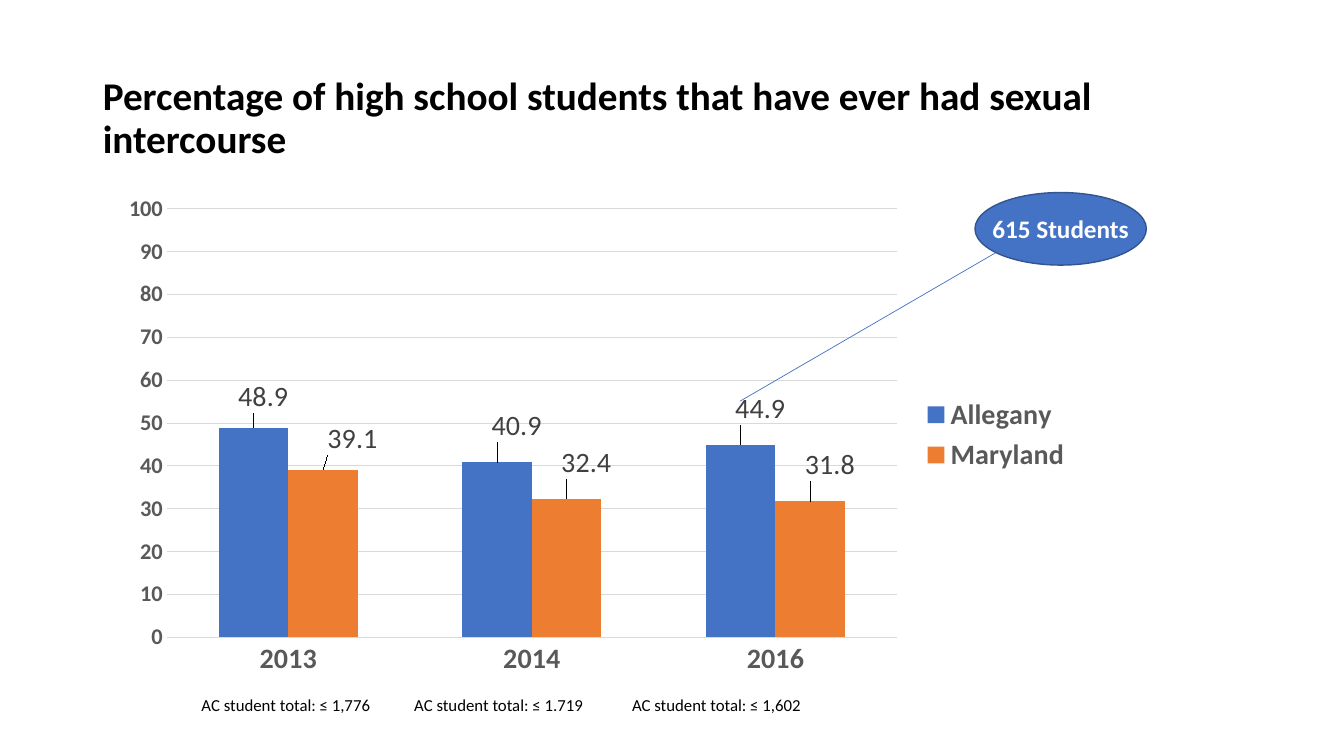
from dataclasses import dataclass

from lxml import etree
from pptx import Presentation
from pptx.chart.data import CategoryChartData
from pptx.dml.color import RGBColor as RGB
from pptx.enum.chart import XL_CHART_TYPE as CT, XL_LABEL_POSITION as LP
from pptx.enum.chart import XL_LEGEND_POSITION as LegendPos, XL_TICK_MARK as Tick
from pptx.enum.shapes import MSO_CONNECTOR as Conn, MSO_SHAPE as Shape
from pptx.enum.text import MSO_ANCHOR as Anchor, MSO_AUTO_SIZE as AutoSize, PP_ALIGN as Align
from pptx.oxml.ns import qn
from pptx.util import Pt


@dataclass(frozen=True)
class Theme:
    font: str = "Calibri"
    black: str = "000000"
    white: str = "FFFFFF"
    axis: str = "595959"
    label: str = "404040"
    grid: str = "D9D9D9"
    blue: str = "4472C4"
    blue_edge: str = "325491"
    orange: str = "ED7D31"
    title: int = 28
    large: int = 20
    callout: int = 18
    scale: int = 16
    note: int = 12


T = Theme()
PX = 9144  # 100 px to the inch

YEARS = ["2013", "2014", "2016"]
# name, colour, values, label shifts as fractions of the chart
SERIES = [
    ("Allegany", T.blue, (48.9, 40.9, 44.9), ((0.01, -0.02), (0.02, -0.03), (0.02, -0.03))),
    ("Maryland", T.orange, (39.1, 32.4, 31.8), ((0.03, -0.02), (0.02, -0.03), (0.02, -0.03))),
]
TOTALS = [(190, "1,776"), (401, "1.719"), (617, "1,602")]


def px(*lengths):
    return [n * PX for n in lengths]


def set_font(font, size, color, bold=False):
    for key, value in {"name": T.font, "size": Pt(size), "bold": bold}.items():
        setattr(font, key, value)
    font.color.rgb = RGB.from_string(color)


def set_line(line, color, width):
    line.color.rgb = RGB.from_string(color)
    line.width = Pt(width)


def add_title(slide, text, box):
    sp = slide.shapes.title
    for key, value in zip(("left", "top", "width", "height"), px(*box)):
        setattr(sp, key, value)
    tf = sp.text_frame
    for key, value in {"text": text, "vertical_anchor": Anchor.MIDDLE,
                       "auto_size": AutoSize.NONE, "word_wrap": True}.items():
        setattr(tf, key, value)
    p = tf.paragraphs[0]
    p.alignment, p.line_spacing = Align.LEFT, 0.9
    set_font(p.runs[0].font, T.title, T.black, True)


def add_text(slide, text, box, size, color, bold=False, align=Align.LEFT):
    tf = slide.shapes.add_textbox(*px(*box)).text_frame
    tf.word_wrap = True
    p = tf.paragraphs[0]
    p.alignment = align
    r = p.add_run()
    r.text = text
    set_font(r.font, size, color, bold)


def add_ellipse(slide, box):
    sp = slide.shapes.add_shape(Shape.OVAL, *px(*box))
    sp.shadow.inherit = False
    sp.fill.solid()
    sp.fill.fore_color.rgb = RGB.from_string(T.blue)
    set_line(sp.line, T.blue_edge, 1)


def add_line(slide, ends):
    line = slide.shapes.add_connector(Conn.STRAIGHT, *px(*ends))
    set_line(line.line, T.blue, 0.5)
    etree.SubElement(line._element.spPr, qn("a:effectLst"))


def make_layout(**values):
    layout = etree.Element(qn("c:layout"))
    manual = etree.SubElement(layout, qn("c:manualLayout"))
    for tag, value in values.items():
        etree.SubElement(manual, qn(f"c:{tag}")).set("val", str(value))
    return layout


def replace_layout(parent, index, layout):
    for old in parent.findall(qn("c:layout")):
        parent.remove(old)
    parent.insert(index, layout)


def format_axis(axis, size):
    axis.major_tick_mark = axis.minor_tick_mark = Tick.NONE
    axis.format.line.fill.background()
    set_font(axis.tick_labels.font, size, T.axis, True)


def format_series(series, color, shifts):
    series.format.fill.solid()
    series.format.fill.fore_color.rgb = RGB.from_string(color)
    labels = series.data_labels
    labels.show_value, labels.position = True, LP.OUTSIDE_END
    set_font(labels.font, T.large, T.label)
    for i, (dx, dy) in enumerate(shifts):
        label = series.points[i].data_label
        label.position = LP.OUTSIDE_END
        set_font(label.font, T.large, T.label)
        replace_layout(labels._element.findall(qn("c:dLbl"))[i], 1, make_layout(x=dx, y=dy))


def add_column_chart(slide, box):
    data = CategoryChartData()
    data.categories = YEARS
    for name, _, values, _ in SERIES:
        data.add_series(name, values)
    chart = slide.shapes.add_chart(CT.COLUMN_CLUSTERED, *px(*box), data).chart
    chart.has_title = False
    set_font(chart.font, 10, T.black)

    # Plot and series
    plot = chart.plots[0]
    for key, value in {"gap_width": 150, "overlap": 0, "vary_by_categories": False}.items():
        setattr(plot, key, value)
    for series, (_, color, _, shifts) in zip(plot.series, SERIES):
        format_series(series, color, shifts)
    replace_layout(chart._chartSpace.chart.plotArea, 0, make_layout(
        layoutTarget="inner", xMode="edge", yMode="edge", x=0.067, y=0.056, w=0.745, h=0.842))

    # Axes
    format_axis(chart.category_axis, T.large)
    axis = chart.value_axis
    format_axis(axis, T.scale)
    for key, value in {"minimum_scale": 0, "maximum_scale": 100, "major_unit": 10,
                       "has_major_gridlines": True}.items():
        setattr(axis, key, value)
    set_line(axis.major_gridlines.format.line, T.grid, 0.75)

    # Legend
    chart.has_legend = True
    chart.legend.position = LegendPos.RIGHT
    chart.legend.include_in_layout = False
    set_font(chart.legend.font, T.large, T.axis, True)


def main():
    prs = Presentation()
    prs.slide_width, prs.slide_height = px(1333, 750)
    slide = prs.slides.add_slide(prs.slide_layouts[5])

    add_title(slide, "Percentage of high school students that have ever had sexual intercourse",
              (92, 46, 1150, 145))
    add_column_chart(slide, (100, 179, 973, 505))

    # Callout on the latest county value
    add_line(slide, (734, 398, 994, 247))
    add_ellipse(slide, (967, 191, 170, 72))
    add_text(slide, "615 Students", (967, 207, 170, 40), T.callout, T.white, True, Align.CENTER)

    # Student totals under the years
    for left, total in TOTALS:
        add_text(slide, f"AC student total: ≤ {total}", (left, 684, 192, 30), T.note, T.black)

    prs.save("out.pptx")


if __name__ == "__main__":
    main()
